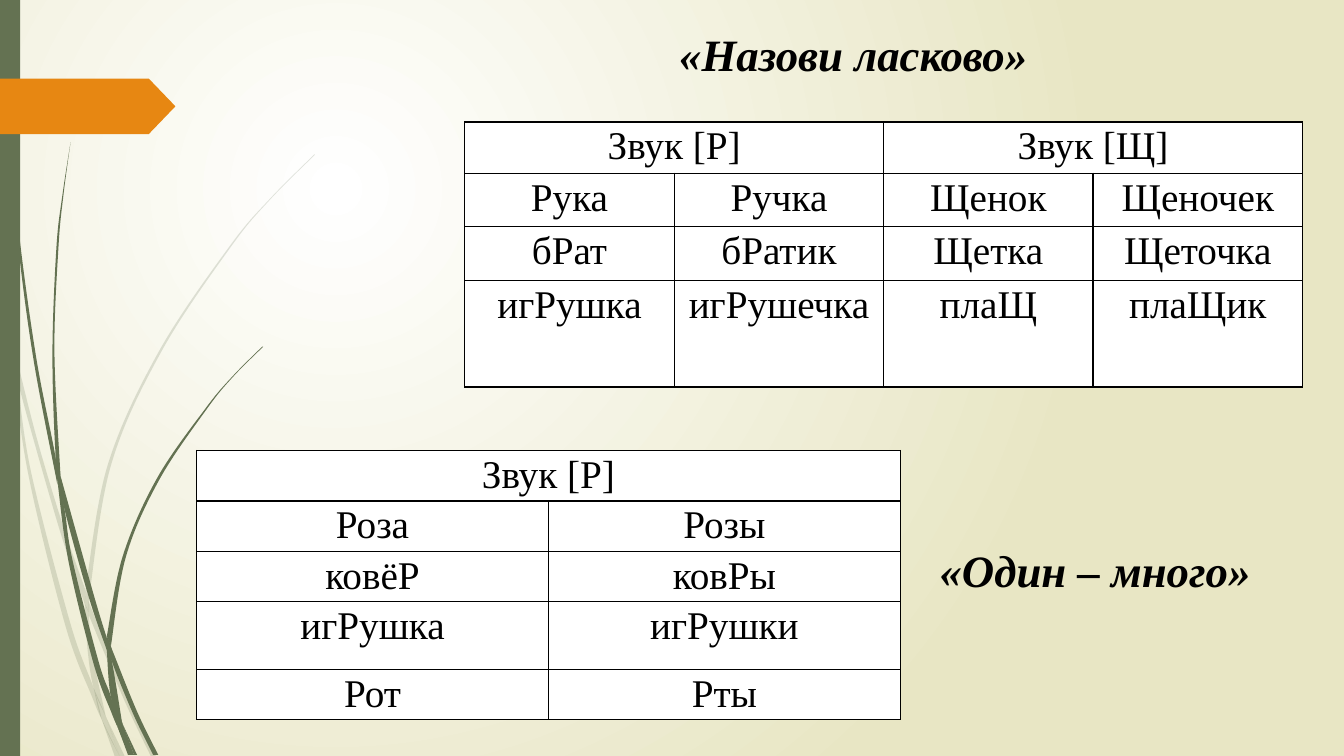
from dataclasses import dataclass

from lxml import etree
from pptx import Presentation
from pptx.dml.color import RGBColor
from pptx.enum.shapes import MSO_SHAPE
from pptx.enum.text import MSO_ANCHOR, MSO_AUTO_SIZE, PP_ALIGN
from pptx.oxml import parse_xml
from pptx.oxml.ns import nsdecls, qn
from pptx.util import Inches, Pt

CENTER, LEFT = PP_ALIGN.CENTER, PP_ALIGN.LEFT
MIDDLE, TOP = MSO_ANCHOR.MIDDLE, MSO_ANCHOR.TOP
NO_AUTOFIT = MSO_AUTO_SIZE.NONE
RECT, ARROW_TAG = MSO_SHAPE.RECTANGLE, MSO_SHAPE.PENTAGON
TITLE_ONLY = 5


@dataclass(frozen=True)
class Theme:
    font: str = "Times New Roman"
    heading_size: int = 32
    cell_size: int = 28
    text: str = "000000"
    cell: str = "FFFFFF"
    glow: str = "FFFFFF"
    sand: str = "E8E6C4"
    green: str = "647252"
    orange: str = "E78712"
    faint: int = 20


# Grass pieces: the two edges of each, from top to bottom
FAINT_GRASS = [
    ([(0, 2.82), (0.09, 3.22), (0.11, 3.5)], [(0, 2.99), (0.1, 3.44), (0.11, 3.5)]),
    ([(0.14, 3.45), (0.36, 4.33), (0.62, 5.2), (0.85, 5.86)],
     [(0.14, 3.45), (0.17, 3.76), (0.58, 5.22), (0.84, 5.99)]),
    ([(0.88, 5.96), (0.92, 6.07), (1.27, 6.92), (1.55, 7.51)],
     [(0.88, 6.1), (1.23, 6.94), (1.5, 7.51)]),
    ([(1.05, 7.11), (1.24, 7.51)], [(1.05, 7.11), (1.19, 7.51)]),
    ([(0.11, 3.5), (0.17, 3.76), (0.31, 4.69), (0.7, 6.19), (0.93, 6.83), (1.01, 7.14)],
     [(0.11, 3.5), (0.28, 4.7), (0.65, 6.21), (0.92, 6.93), (1.01, 7.14)]),
    ([(0.84, 5.99), (0.88, 6.1), (0.91, 6.46), (1.05, 7.11)],
     [(0.84, 5.99), (0.87, 6.46), (0.93, 6.83), (1.05, 7.11)]),
    ([(3.12, 1.53), (2.68, 1.97), (2.28, 2.44), (1.58, 3.48), (1.07, 4.61), (0.85, 5.84)],
     [(3.12, 1.54), (2.68, 1.98), (2.29, 2.45), (1.6, 3.49), (1.1, 4.62), (0.88, 5.96)]),
    ([(1.01, 7.14), (1.19, 7.51)], [(1.01, 7.14), (1.14, 7.51)]),
    ([(0.85, 5.86), (0.88, 5.96), (0.88, 6.1)], [(0.84, 5.99), (0.88, 6.08)]),
    ([(0.93, 6.83), (1.05, 7.11), (1.19, 7.51)],
     [(0.93, 6.83), (1.01, 7.14), (1.19, 7.51)]),
]
DARK_GRASS = [
    ([(0.04, 0), (0.08, 1.09), (0.19, 2.32), (0.36, 3.55), (0.55, 4.53), (0.57, 4.81)],
     [(0.03, 0), (0.07, 1.1), (0.17, 2.33), (0.33, 3.55), (0.57, 4.81)]),
    ([(0.6, 4.72), (0.93, 5.9), (1.06, 6.33)],
     [(0.6, 4.72), (0.64, 5.05), (0.88, 5.92), (1.06, 6.45)]),
    ([(1.1, 6.41), (1.13, 6.49), (1.36, 7.06), (1.57, 7.49)],
     [(1.1, 6.41), (1.11, 6.56), (1.32, 7.08), (1.52, 7.49)]),
    ([(0.57, 4.77), (0.64, 5.05), (0.72, 5.56), (0.98, 6.57), (1.1, 6.91), (1.17, 7.22)],
     [(0.57, 4.77), (0.68, 5.57), (0.93, 6.59), (1.11, 7.08), (1.17, 7.22)]),
    ([(0.7, 1.41), (0.63, 1.93), (0.58, 2.45), (0.54, 3.49), (0.6, 4.72)],
     [(0.7, 1.41), (0.62, 1.93), (0.56, 2.45), (0.52, 3.49), (0.55, 4.49), (0.6, 4.72)]),
    ([(1.22, 7.19), (1.36, 7.49)], [(1.22, 7.19), (1.33, 7.49)]),
    ([(0.55, 4.49), (0.6, 4.72), (0.64, 5.05)], [(0.55, 4.49), (0.57, 4.77), (0.64, 5.05)]),
    ([(2.61, 3.44), (2.31, 3.74), (2.05, 4.06), (1.58, 4.76), (1.25, 5.52), (1.1, 6.41)],
     [(2.6, 3.44), (2.31, 3.73), (2.04, 4.05), (1.56, 4.74), (1.22, 5.51), (1.06, 6.31)]),
    ([(1.17, 7.22), (1.31, 7.49)], [(1.17, 7.22), (1.27, 7.49)]),
    ([(1.06, 6.45), (1.11, 6.56), (1.21, 7.16)], [(1.06, 6.45), (1.1, 6.91), (1.22, 7.19)]),
    ([(1.06, 6.31), (1.1, 6.41), (1.11, 6.56)], [(1.06, 6.31), (1.06, 6.45), (1.11, 6.56)]),
    ([(1.1, 6.91), (1.22, 7.19), (1.33, 7.49)], [(1.1, 6.91), (1.17, 7.22), (1.3, 7.49)]),
]

DIMINUTIVES = [
    ["Звук [Р]", None, "Звук [Щ]", None],
    ["Рука", "Ручка", "Щенок", "Щеночек"],
    ["бРат", "бРатик", "Щетка", "Щеточка"],
    ["игРушка", "игРушечка", "плаЩ", "плаЩик"],
]
PLURALS = [
    ["Звук [Р]", None],
    ["Роза", "Розы"],
    ["ковёР", "ковРы"],
    ["игРушка", "игРушки"],
    ["Рот", "Рты"],
]


def handles(edge):
    """Bezier handles for each segment of a smooth edge."""
    ends = [edge[0], *edge, edge[-1]]
    return [([q + (r - p) / 6 for p, q, r in zip(a, b, c)],
             [r - (u - q) / 6 for q, r, u in zip(b, c, d)])
            for a, b, c, d in zip(ends, ends[1:], ends[2:], ends[3:])]


class SlideBuilder:
    def __init__(self, slide, theme):
        self.s, self.theme = slide, theme

    def background(self):
        fill = self.s.background.fill
        fill.gradient()
        for stop, color in zip(fill.gradient_stops, (self.theme.glow, self.theme.sand)):
            stop.color.rgb = RGBColor.from_string(color)
        grad = next(self.s.element.iter(qn("a:gradFill")))
        grad.replace(grad.find(qn("a:lin")), parse_xml(
            f'<a:path {nsdecls("a")} path="circle">'
            '<a:fillToRect l="50000" t="50000" r="100000" b="100000"/></a:path>'))

    def paint(self, sp, color, opacity=100):
        sp.shadow.inherit = False
        sp.fill.solid()
        sp.fill.fore_color.rgb = RGBColor.from_string(color)
        sp.line.fill.background()
        if opacity < 100:
            clr = sp.element.spPr.find(qn("a:solidFill"))[0]
            etree.SubElement(clr, qn("a:alpha"), val=str(opacity * 1000))

    def shape(self, kind, x, y, w, h, color):
        sp = self.s.shapes.add_shape(kind, Inches(x), Inches(y), Inches(w), Inches(h))
        self.paint(sp, color)
        return sp

    def grass(self, right, left, opacity=100):
        edges = [[(Inches(x), Inches(y)) for x, y in edge] for edge in (right, left[::-1])]
        outline = edges[0] + edges[1]
        builder = self.s.shapes.build_freeform(*outline[0])
        builder.add_line_segments(outline[1:], close=True)
        sp = builder.convert_to_shape()
        # Bend the segments along both edges; the one joining them stays straight
        bends = handles(edges[0]) + [None] + handles(edges[1])
        for line, bend in zip(list(sp.element.iter(qn("a:lnTo"))), bends):
            if bend:
                line.tag = qn("a:cubicBezTo")
                for i, (x, y) in enumerate(bend):
                    line.insert(i, line.makeelement(qn("a:pt"), {
                        "x": str(round(x - sp.left)), "y": str(round(y - sp.top))}))
        self.paint(sp, self.theme.green, opacity)

    def style_text(self, p, size, align, bold=False):
        p.alignment = align
        for r in p.runs:
            r.font.name, r.font.size = self.theme.font, Pt(size)
            r.font.bold = r.font.italic = bold
            r.font.color.rgb = RGBColor.from_string(self.theme.text)

    def heading(self, sp, text, x, y, w, h, align):
        sp.left, sp.top, sp.width, sp.height = map(Inches, (x, y, w, h))
        tf = sp.text_frame
        tf.text = text
        tf.word_wrap, tf.auto_size, tf.vertical_anchor = True, NO_AUTOFIT, MIDDLE
        self.style_text(tf.paragraphs[0], self.theme.heading_size, align, bold=True)

    def title(self, text, x, y, w, h):
        self.heading(self.s.shapes.title, text, x, y, w, h, CENTER)

    def label(self, text, x, y, w, h):
        sp = self.s.shapes.add_textbox(0, 0, 0, 0)
        self.heading(sp, text, x, y, w, h, LEFT)

    def cell(self, cell, text):
        cell.text = text or ""
        cell.margin_left = cell.margin_right = Inches(0.07)
        cell.margin_top = cell.margin_bottom = 0
        cell.vertical_anchor = TOP
        p = cell.text_frame.paragraphs[0]
        p.line_spacing = 1.07
        self.style_text(p, self.theme.cell_size, CENTER)
        tcPr = cell._tc.get_or_add_tcPr()
        for side in ("lnL", "lnR", "lnT", "lnB"):
            ln = etree.SubElement(tcPr, qn(f"a:{side}"), w=str(Pt(1)))
            line_fill = etree.SubElement(ln, qn("a:solidFill"))
            etree.SubElement(line_fill, qn("a:srgbClr"), val=self.theme.text)
        cell.fill.solid()
        cell.fill.fore_color.rgb = RGBColor.from_string(self.theme.cell)

    def table(self, rows, x, y, w, heights):
        cols = len(rows[0])
        table = self.s.shapes.add_table(len(rows), cols, Inches(x), Inches(y),
                                        Inches(w), Inches(sum(heights))).table
        table.first_row = table.horz_banding = False
        for i, (row, height) in enumerate(zip(rows, heights)):
            table.rows[i].height = Inches(height)
            for j, text in enumerate(row):
                self.cell(table.cell(i, j), text)
        # Each heading spans a pair of columns
        for j in range(0, cols, 2):
            table.cell(0, j).merge(table.cell(0, j + 1))


def main():
    prs = Presentation()
    prs.slide_width, prs.slide_height = Inches(13.33), Inches(7.5)
    theme = Theme()
    page = SlideBuilder(prs.slides.add_slide(prs.slide_layouts[TITLE_ONLY]), theme)

    # Backdrop
    page.background()
    for pieces, opacity in ((FAINT_GRASS, theme.faint), (DARK_GRASS, 100)):
        for right, left in pieces:
            page.grass(right, left, opacity)
    page.shape(RECT, 0, 0, 0.2, 7.5, theme.green)
    tag = page.shape(ARROW_TAG, 0, 0.78, 1.74, 0.55, theme.orange)
    tag.adjustments[0] = 0.48

    # Word tables with their headings
    page.title("«Назови ласково»", 5.61, 0.21, 5.71, 0.64)
    page.table(DIMINUTIVES, 4.61, 1.21, 8.31, [0.51, 0.53, 0.53, 1.06])
    page.table(PLURALS, 1.95, 4.47, 6.98, [0.5, 0.5, 0.5, 0.67, 0.5])
    page.label("«Один – много»", 9.22, 5.33, 3.32, 0.64)

    prs.save("out.pptx")


if __name__ == "__main__":
    main()
